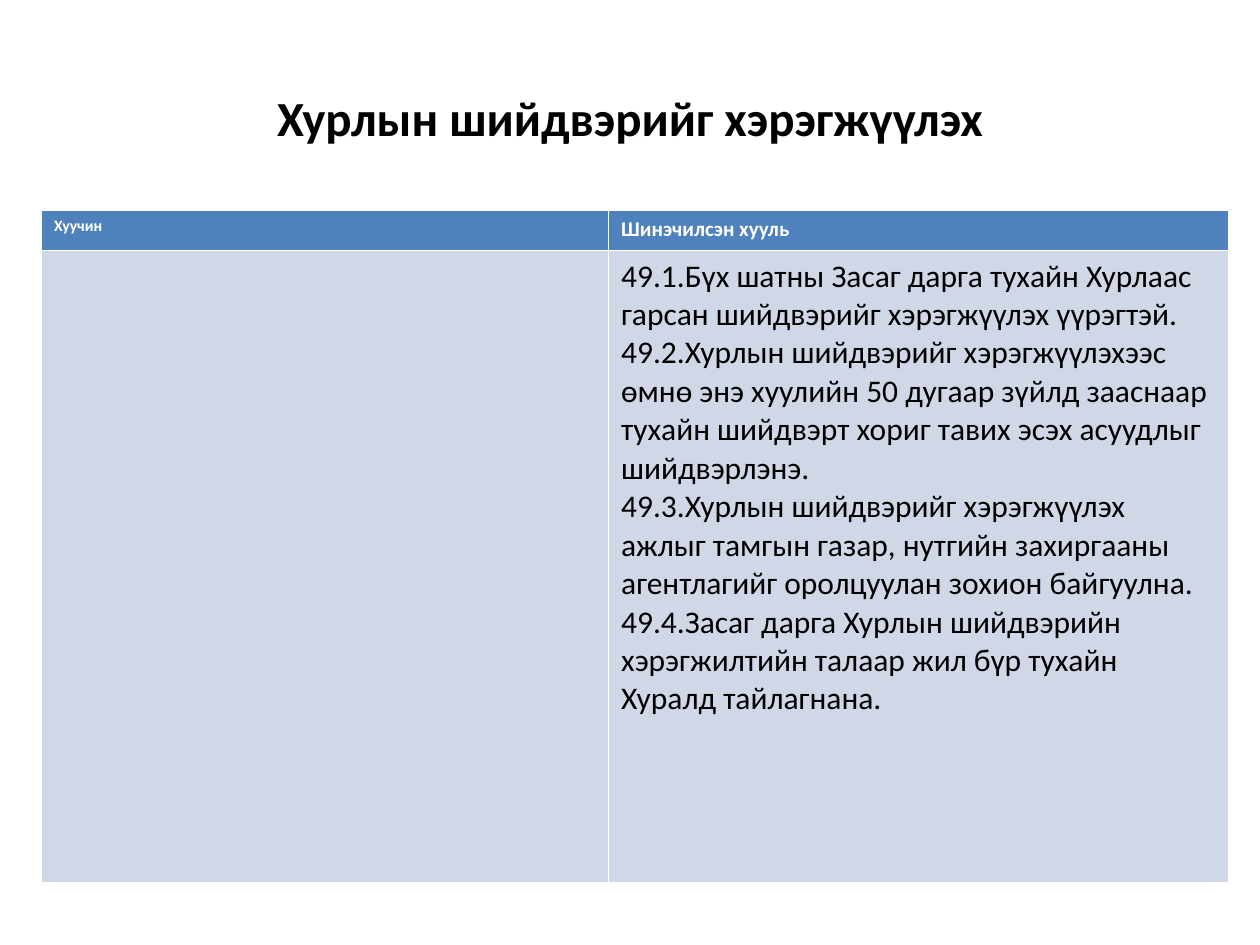
from dataclasses import dataclass

from pptx import Presentation
from pptx.dml.color import RGBColor
from pptx.enum.text import MSO_ANCHOR, PP_ALIGN
from pptx.util import Inches, Pt

MIDDLE = MSO_ANCHOR.MIDDLE
CENTER = PP_ALIGN.CENTER
TITLE_ONLY = 5
FONT = "Calibri"
BLACK = "000000"
WHITE = "FFFFFF"
HEADER_FILL = "4F81BD"
BODY_FILL = "D0D8E8"


@dataclass(frozen=True)
class CellText:
    paragraphs: tuple[str, ...]
    size: int
    color: str
    bold: bool
    fill: str


ROWS = (
    (
        CellText(("Хуучин",), 9, WHITE, True, HEADER_FILL),
        CellText(("Шинэчилсэн хууль",), 12, WHITE, True, HEADER_FILL),
    ),
    (
        CellText((), 18, BLACK, False, BODY_FILL),
        CellText(
            (
                "49.1.Бүх шатны Засаг дарга тухайн Хурлаас гарсан шийдвэрийг "
                "хэрэгжүүлэх үүрэгтэй.",
                "49.2.Хурлын шийдвэрийг хэрэгжүүлэхээс өмнө энэ хуулийн 50 дугаар "
                "зүйлд зааснаар тухайн шийдвэрт хориг тавих эсэх асуудлыг шийдвэрлэнэ.",
                "49.3.Хурлын шийдвэрийг хэрэгжүүлэх ажлыг тамгын газар, нутгийн "
                "захиргааны агентлагийг оролцуулан зохион байгуулна.",
                "49.4.Засаг дарга Хурлын шийдвэрийн хэрэгжилтийн талаар жил бүр "
                "тухайн Хуралд тайлагнана.",
            ),
            18, BLACK, False, BODY_FILL,
        ),
    ),
)
COLUMN_WIDTHS = (4.5, 4.92)
ROW_HEIGHTS = (0.32, 5.02)


def rgb(value: str) -> RGBColor:
    return RGBColor.from_string(value)


def add_span(para, text: str, size: int, color: str, bold: bool) -> None:
    span = para.add_run()
    span.text = text
    span.font.name = FONT
    span.font.size = Pt(size)
    span.font.bold = bold
    span.font.color.rgb = rgb(color)


def add_title(page, text: str) -> None:
    box = page.shapes.title
    box.left, box.top = Inches(0.5), Inches(0.3)
    box.width, box.height = Inches(9), Inches(1.25)
    box.text_frame.vertical_anchor = MIDDLE
    para = box.text_frame.paragraphs[0]
    para.alignment = CENTER
    add_span(para, text, 28, BLACK, True)


def fill_cell(cell, content: CellText) -> None:
    cell.fill.solid()
    cell.fill.fore_color.rgb = rgb(content.fill)
    frame = cell.text_frame
    for index, text in enumerate(content.paragraphs):
        para = frame.add_paragraph() if index else frame.paragraphs[0]
        add_span(para, text, content.size, content.color, content.bold)


def add_law_table(page) -> None:
    table = page.shapes.add_table(
        len(ROW_HEIGHTS), len(COLUMN_WIDTHS), Inches(0.33), Inches(1.67),
        Inches(sum(COLUMN_WIDTHS)), Inches(sum(ROW_HEIGHTS)),
    ).table
    for column, width in zip(table.columns, COLUMN_WIDTHS):
        column.width = Inches(width)
    for row, height, contents in zip(table.rows, ROW_HEIGHTS, ROWS):
        row.height = Inches(height)
        for cell, content in zip(row.cells, contents):
            fill_cell(cell, content)


def main() -> None:
    deck = Presentation()
    deck.slide_width, deck.slide_height = Inches(10), Inches(7.5)
    page = deck.slides.add_slide(deck.slide_layouts[TITLE_ONLY])
    add_title(page, "Хурлын шийдвэрийг хэрэгжүүлэх")
    add_law_table(page)
    deck.save("out.pptx")


if __name__ == "__main__":
    main()
